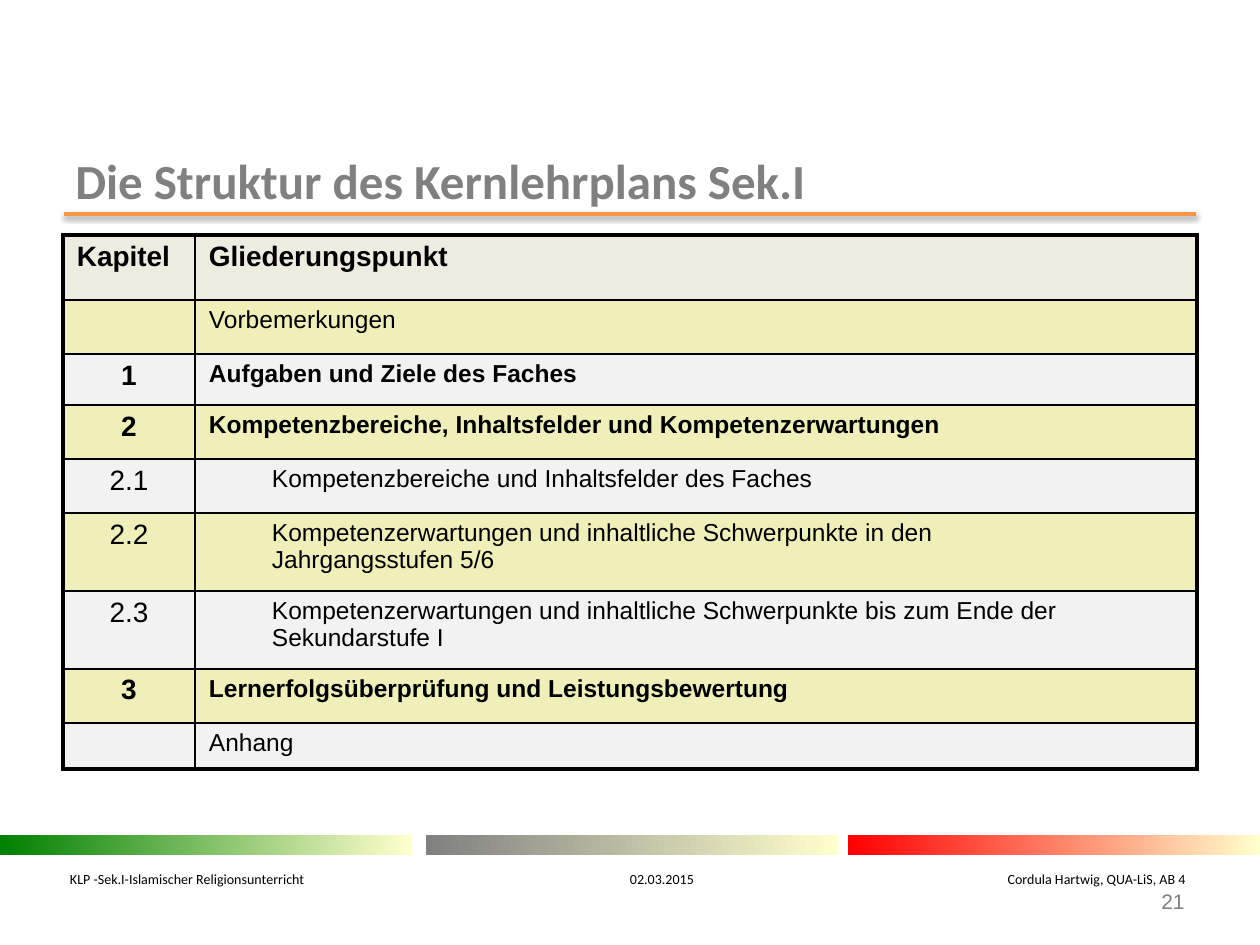
import lxml.etree
import pptx
import pptx.dml.color
import pptx.enum.shapes
import pptx.enum.text
import pptx.oxml
import pptx.oxml.ns
import pptx.util

PX = 914400 / 126
COLORS = {
    "black": "000000", "gray": "808080", "orange": "F79646", "green": "008000",
    "red": "FF0000", "cream": "FFFFCC", "header": "EEECE1", "yellow": "EFEFB9",
    "light": "F2F2F2",
}
ALIGN = pptx.enum.text.PP_ALIGN
COLUMN_WIDTHS = [132, 1002]
ROW_HEIGHTS = [65, 54, 51, 54, 54, 78, 78, 54, 46]
CHAPTERS = [
    ("Kapitel", "Gliederungspunkt"),
    ("", "Vorbemerkungen"),
    ("1", "Aufgaben und Ziele des Faches"),
    ("2", "Kompetenzbereiche, Inhaltsfelder und Kompetenzerwartungen"),
    ("2.1", "Kompetenzbereiche und Inhaltsfelder des Faches"),
    ("2.2", "Kompetenzerwartungen und inhaltliche Schwerpunkte in den\nJahrgangsstufen 5/6"),
    ("2.3", "Kompetenzerwartungen und inhaltliche Schwerpunkte bis zum Ende der Sekundarstufe I"),
    ("3", "Lernerfolgsüberprüfung und Leistungsbewertung"),
    ("", "Anhang"),
]


def px(length):
    """Turn pixels into EMU."""
    return pptx.util.Emu(round(length * PX))


def rgb(name):
    """Look up a named colour."""
    return pptx.dml.color.RGBColor.from_string(COLORS[name])


def format_runs(paragraph, size, font, color, bold=False):
    """Format every run of a paragraph."""
    for run in paragraph.runs:
        run.font.size = pptx.util.Pt(size)
        run.font.name = font
        run.font.bold = bold
        run.font.color.rgb = rgb(color)


def add_text(slide, box, text, size, font, color, bold=False, align=ALIGN.LEFT):
    """Add a vertically centred text box and return its shape."""
    shape = slide.shapes.add_textbox(*map(px, box))
    frame = shape.text_frame
    frame.word_wrap = True
    frame.vertical_anchor = pptx.enum.text.MSO_ANCHOR.MIDDLE
    frame.text = text
    frame.paragraphs[0].alignment = align
    format_runs(frame.paragraphs[0], size, font, color, bold)
    return shape


def add_title_rule(slide):
    """Draw the orange rule with its soft shadow."""
    line = slide.shapes.add_connector(
        pptx.enum.shapes.MSO_CONNECTOR.STRAIGHT, px(64), px(214), px(1196), px(214))
    line.line.color.rgb = rgb("orange")
    line.line.width = pptx.util.Pt(2)
    line._element.spPr.append(pptx.oxml.parse_xml(
        f'<a:effectLst {pptx.oxml.ns.nsdecls("a")}>'
        '<a:outerShdw blurRad="39370" dist="20320" dir="5400000" rotWithShape="0">'
        f'<a:srgbClr val="{COLORS["black"]}"><a:alpha val="38000"/></a:srgbClr>'
        '</a:outerShdw></a:effectLst>'))


def add_gradient_bar(slide, left, color):
    """Add a footer bar fading from a colour to cream."""
    bar = slide.shapes.add_shape(
        pptx.enum.shapes.MSO_SHAPE.RECTANGLE, px(left), px(835), px(412), px(20))
    bar.shadow.inherit = False
    bar.line.fill.background()
    bar.fill.gradient()
    bar.fill.gradient_angle = 0
    for stop, name in zip(bar.fill.gradient_stops, (color, "cream")):
        stop.color.rgb = rgb(name)


def set_borders(cell, widths):
    """Draw the cell borders with a width in points for each side."""
    properties = cell._tc.get_or_add_tcPr()
    for side in "LRTB":
        properties.append(pptx.oxml.parse_xml(
            f'<a:ln{side} {pptx.oxml.ns.nsdecls("a")} w="{round(widths[side] * 12700)}">'
            f'<a:solidFill><a:srgbClr val="{COLORS["black"]}"/></a:solidFill></a:ln{side}>'))


def fill_cell(cell, text, size, bold, align, indent):
    """Write the text of a table cell."""
    cell.margin_left = cell.margin_right = px(14)
    cell.margin_top = cell.margin_bottom = px(6)
    cell.text_frame.text = text
    for paragraph in cell.text_frame.paragraphs:
        paragraph.alignment = align
        if indent:
            paragraph._p.get_or_add_pPr().set("marL", str(px(63)))
        format_runs(paragraph, size, "Arial", "black", bold)
        if not text:
            lxml.etree.SubElement(
                paragraph._p, pptx.oxml.ns.qn("a:endParaRPr"), sz=str(size * 100))


def add_chapter_table(slide):
    """Add the table of chapters with a thick outer frame."""
    last = len(CHAPTERS) - 1
    table = slide.shapes.add_table(
        len(CHAPTERS), 2, px(63), px(235), px(sum(COLUMN_WIDTHS)), px(sum(ROW_HEIGHTS))).table
    table.first_row = table.horz_banding = False
    for column, width in zip(table.columns, COLUMN_WIDTHS):
        column.width = px(width)
    for index, (chapter, height) in enumerate(zip(CHAPTERS, ROW_HEIGHTS)):
        table.rows[index].height = px(height)
        number = chapter[0]
        header = index == 0
        fill = "header" if header else "yellow" if index % 2 else "light"
        for column, text in enumerate(chapter):
            cell = table.cell(index, column)
            outer = {"L": column == 0, "R": column == 1, "T": header, "B": index == last}
            set_borders(cell, {side: 2.25 if edge else 1 for side, edge in outer.items()})
            cell.fill.solid()
            cell.fill.fore_color.rgb = rgb(fill)
            size = 16 if header or (column == 0 and number) else 14
            align = ALIGN.CENTER if column == 0 and not header else ALIGN.LEFT
            bold = bool(number) and "." not in number
            fill_cell(cell, text, size, bold, align, column == 1 and "." in number)


def add_footer(slide):
    """Add the footer line, spread by tab stops, and the page number."""
    footer = add_text(
        slide, (15, 859, 1230, 39),
        "KLP -Sek.I-Islamischer Religionsunterricht\t02.03.2015\tCordula Hartwig, QUA-LiS, AB 4",
        8, "Calibri", "black")
    footer.text_frame.margin_left = px(55)
    properties = footer.text_frame.paragraphs[0]._p.get_or_add_pPr()
    tabs = lxml.etree.SubElement(properties, pptx.oxml.ns.qn("a:tabLst"))
    for position, kind in ((592, "ctr"), (1116, "r")):
        lxml.etree.SubElement(tabs, pptx.oxml.ns.qn("a:tab"), pos=str(px(position)), algn=kind)
    add_text(slide, (903, 876, 294, 50), "21", 12, "Arial", "gray", align=ALIGN.RIGHT)


def main():
    """Build the slide and save it."""
    presentation = pptx.Presentation()
    presentation.slide_width, presentation.slide_height = px(1260), px(945)
    slide = presentation.slides.add_slide(presentation.slide_layouts[6])
    add_title_rule(slide)
    for left, color in ((0, "green"), (426, "gray"), (848, "red")):
        add_gradient_bar(slide, left, color)
    add_text(slide, (63, 155, 1134, 49), "Die Struktur des Kernlehrplans Sek.I",
             28, "Calibri", "gray", bold=True)
    add_chapter_table(slide)
    add_footer(slide)
    presentation.save("out.pptx")


if __name__ == "__main__":
    main()
